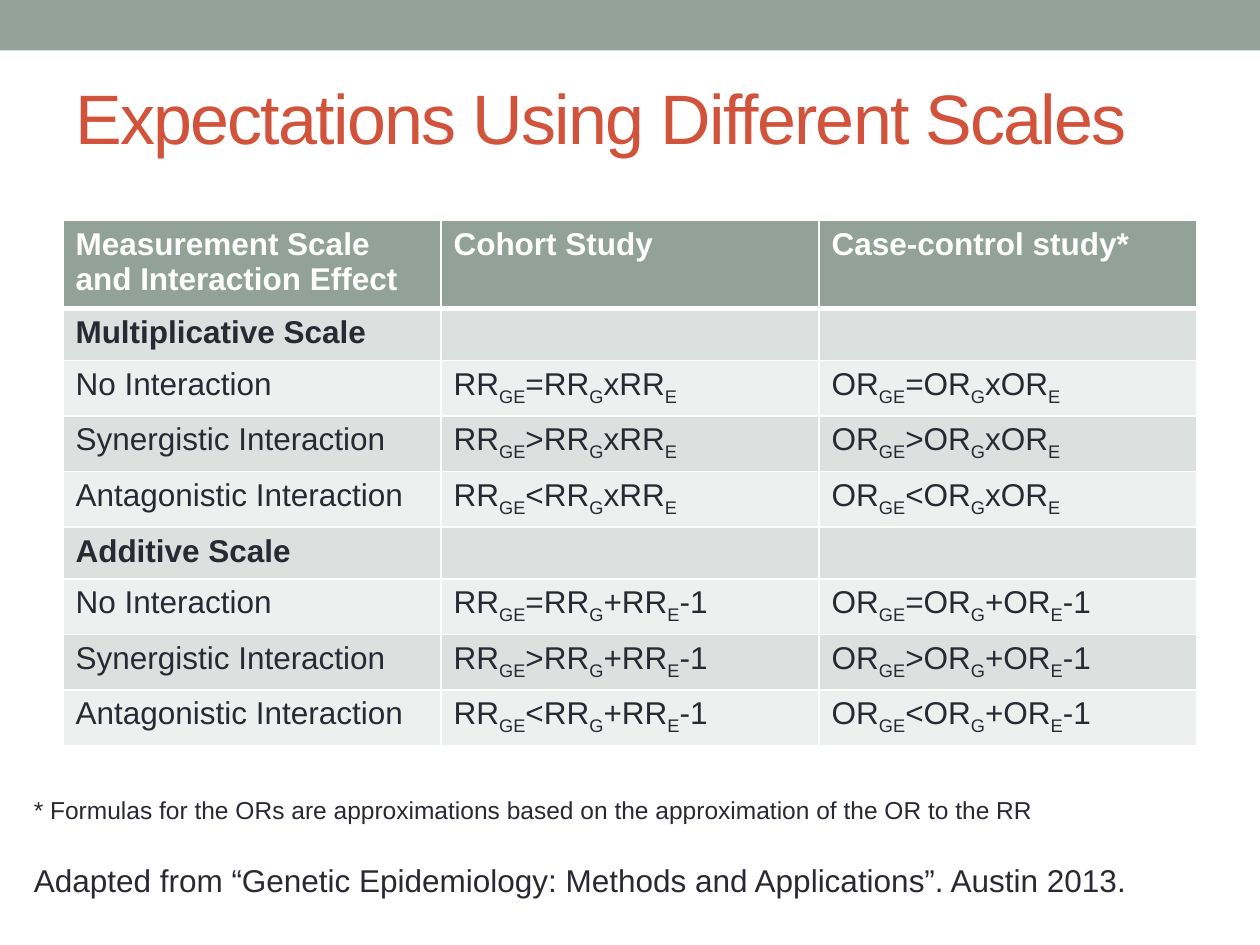
import lxml.etree
import pptx
import pptx.dml.color
import pptx.enum.shapes
import pptx.enum.text
import pptx.oxml.ns
import pptx.util

WIDTH, HEIGHT = 10, 7.5
MARGIN = WIDTH / 20
ROW_HEIGHT = 0.41
FONT = "Arial"
SAGE, RUST, INK, WHITE = "93A299", "D2533C", "292934", "FFFFFF"
BANDS = ("DCE0DE", "EEF0EF")
HEADERS = ("Measurement Scale and Interaction Effect", "Cohort Study", "Case-control study*")
SCALES = (("Multiplicative Scale", "x", ""), ("Additive Scale", "+", "-1"))
EFFECTS = (("No Interaction", "="), ("Synergistic Interaction", ">"), ("Antagonistic Interaction", "<"))
NOTE = "* Formulas for the ORs are approximations based on the approximation of the OR to the RR"
CREDIT = "Adapted from “Genetic Epidemiology: Methods and Applications”. Austin 2013."


def color(value):
    """Turn a hex string into a colour."""
    return pptx.dml.color.RGBColor.from_string(value)


def inches(*values):
    """Turn numbers of inches into lengths."""
    return [pptx.util.Inches(value) for value in values]


def set_font(paragraph, size, value, bold=False):
    """Set the font of a whole paragraph."""
    font = paragraph.font
    font.name, font.size, font.bold = FONT, pptx.util.Pt(size), bold
    font.color.rgb = color(value)


def add_band(slide):
    """Draw the band along the top edge."""
    shape = slide.shapes.add_shape(
        pptx.enum.shapes.MSO_SHAPE.RECTANGLE, *inches(0, 0, WIDTH, 0.4))
    shape.shadow.inherit = False
    shape.fill.solid()
    shape.fill.fore_color.rgb = color(SAGE)
    shape.line.fill.background()


def add_text_box(slide, *box):
    """Add a wrapping text box and return its text frame."""
    frame = slide.shapes.add_textbox(*inches(*box)).text_frame
    frame.word_wrap = True
    return frame


def add_title(slide):
    """Add the tightly spaced title."""
    frame = add_text_box(slide, MARGIN, 0.3, WIDTH - 2 * MARGIN, 1.25)
    frame.vertical_anchor = pptx.enum.text.MSO_ANCHOR.MIDDLE
    paragraph = frame.paragraphs[0]
    run = paragraph.add_run()
    run.text = "Expectations Using Different Scales"
    run.font._element.set("spc", "-100")
    set_font(paragraph, 40, RUST)


def formula(ratio, sign, operator, ending):
    """List text pieces, every second one a subscript."""
    return [ratio, "GE", sign + ratio, "G", operator + ratio, "E", ending]


def table_rows():
    """List each row as cells made of text pieces."""
    rows = [[[header] for header in HEADERS]]
    for scale, operator, ending in SCALES:
        rows.append([[scale], [], []])
        for effect, sign in EFFECTS:
            rows.append([[effect]] + [formula(ratio, sign, operator, ending) for ratio in ("RR", "OR")])
    return rows


def set_borders(cell, top, bottom):
    """Draw white borders around a cell."""
    properties = cell._tc.get_or_add_tcPr()
    for side, width in (("L", 1), ("R", 1), ("T", top), ("B", bottom)):
        line = lxml.etree.SubElement(
            properties, pptx.oxml.ns.qn(f"a:ln{side}"), w=str(pptx.util.Pt(width)))
        fill = lxml.etree.SubElement(line, pptx.oxml.ns.qn("a:solidFill"))
        lxml.etree.SubElement(fill, pptx.oxml.ns.qn("a:srgbClr"), val=WHITE)


def fill_cell(cell, pieces, background, text_color, bold):
    """Write the pieces into a cell and colour it."""
    cell.fill.solid()
    cell.fill.fore_color.rgb = color(background)
    paragraph = cell.text_frame.paragraphs[0]
    set_font(paragraph, 18, text_color, bold)
    for index, piece in enumerate(pieces):
        if piece:
            run = paragraph.add_run()
            run.text = piece
            run.font.bold = bold
            if index % 2:
                run.font._element.set("baseline", "-25000")


def add_scale_table(slide):
    """Add the table of expectations by scale and study."""
    rows = table_rows()
    table = slide.shapes.add_table(
        len(rows), len(HEADERS),
        *inches(MARGIN, 1.75, WIDTH - 2 * MARGIN, ROW_HEIGHT * len(rows))).table
    table.first_row = table.horz_banding = False
    for row_index, row in enumerate(rows):
        is_header = row_index == 0
        is_bold = is_header or not row[1]
        background = SAGE if is_header else BANDS[(row_index - 1) % 2]
        for column_index, pieces in enumerate(row):
            cell = table.cell(row_index, column_index)
            set_borders(cell, 3 if row_index == 1 else 1, 3 if is_header else 1)
            fill_cell(cell, pieces, background, WHITE if is_header else INK, is_bold)


def add_notes_below(slide):
    """Add the footnote and the credit under the table."""
    frame = add_text_box(slide, 0.17, 6.26, 9.64, 0.94)
    note = frame.paragraphs[0]
    note.text = NOTE
    set_font(note, 14, INK)
    credit = frame.add_paragraph()
    credit.text = CREDIT
    credit.space_before = pptx.util.Pt(21)
    set_font(credit, 18, INK)


def main():
    """Build the slide and save it."""
    presentation = pptx.Presentation()
    presentation.slide_width, presentation.slide_height = inches(WIDTH, HEIGHT)
    slide = presentation.slides.add_slide(presentation.slide_layouts[6])
    add_band(slide)
    add_title(slide)
    add_scale_table(slide)
    add_notes_below(slide)
    presentation.save("out.pptx")


if __name__ == "__main__":
    main()
